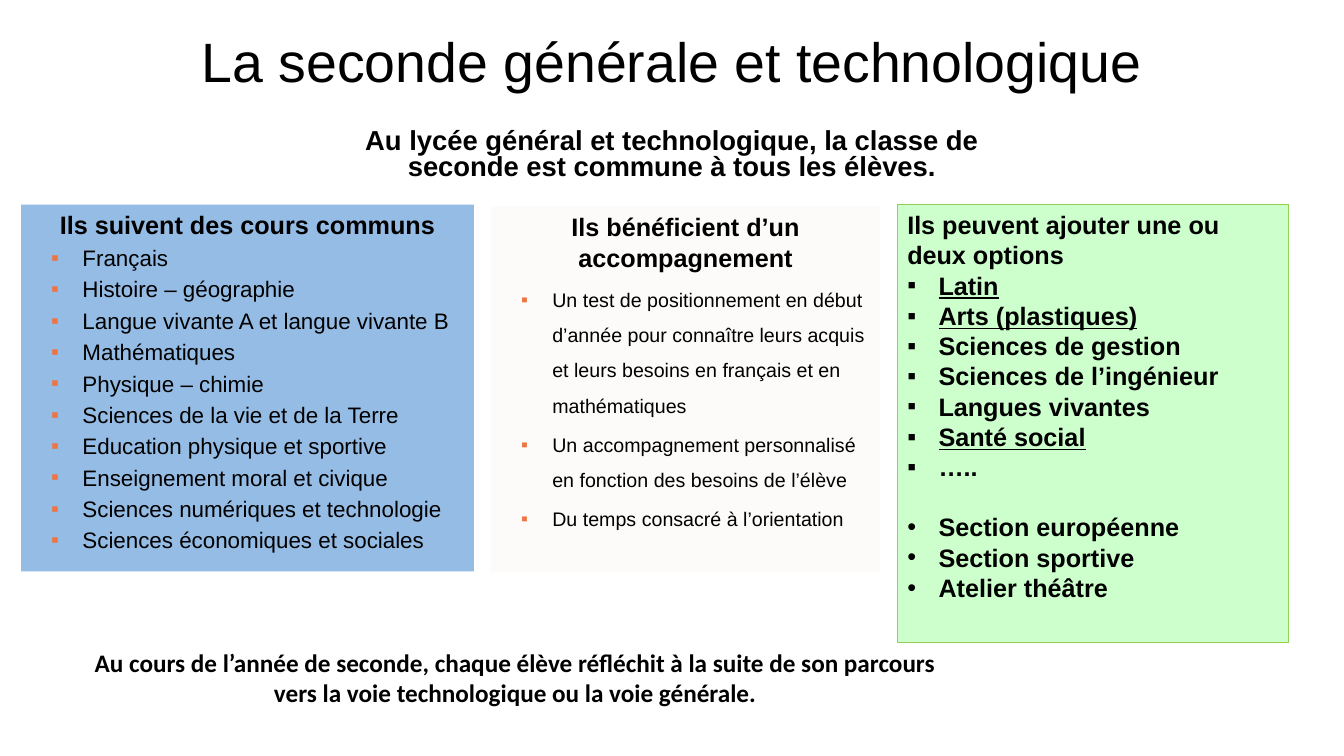
from dataclasses import dataclass

from lxml.etree import SubElement
from pptx import Presentation
from pptx.dml.color import RGBColor
from pptx.enum.shapes import MSO_SHAPE
from pptx.enum.text import MSO_ANCHOR, MSO_AUTO_SIZE, PP_ALIGN
from pptx.oxml.ns import qn
from pptx.util import Inches, Pt


@dataclass(frozen=True)
class Theme:
    font: str = "Arial"
    closing_font: str = "Calibri"
    ink: str = "000000"
    accent: str = "EE7444"
    blue: str = "95BCE5"
    cream: str = "FCFBF9"
    green: str = "CCFFCC"
    green_edge: str = "92D050"
    title: float = 39.6
    intro: float = 19.6
    heading: float = 18
    course: float = 16
    support: float = 14


THEME = Theme()
HANG = 0.31
SQUARE, DOT = "▪", "•"

COURSES = [
    "Français",
    "Histoire – géographie",
    "Langue vivante A et langue vivante B",
    "Mathématiques",
    "Physique – chimie",
    "Sciences de la vie et de la Terre",
    "Education physique et sportive",
    "Enseignement moral et civique",
    "Sciences numériques et technologie",
    "Sciences économiques et sociales",
]
SUPPORT = [
    "Un test de positionnement en début d’année pour connaître leurs acquis "
    "et leurs besoins en français et en mathématiques",
    "Un accompagnement personnalisé en fonction des besoins de l’élève",
    "Du temps consacré à l’orientation",
]
OPTIONS = [
    "Latin",
    "Arts (plastiques)",
    "Sciences de gestion",
    "Sciences de l’ingénieur",
    "Langues vivantes",
    "Santé social",
    "…..",
]
UNDERLINED = {"Latin", "Arts (plastiques)", "Santé social"}
SECTIONS = ["Section européenne", "Section sportive", "Atelier théâtre"]


def style(para, size, bold=True, font=THEME.font, align=PP_ALIGN.LEFT):
    para.alignment = align
    for span in para.runs:
        span.font.name = font
        span.font.size = Pt(size)
        span.font.bold = bold
        span.font.color.rgb = RGBColor.from_string(THEME.ink)


def place(box, left, top, width, height):
    box.left, box.top = Inches(left), Inches(top)
    box.width, box.height = Inches(width), Inches(height)


def fill_placeholder(box, area, text, size, bold, align, spacing, anchor):
    place(box, *area)
    frame = box.text_frame
    frame.text = text
    frame.word_wrap = True
    frame.auto_size = MSO_AUTO_SIZE.NONE
    frame.vertical_anchor = anchor
    para = frame.paragraphs[0]
    properties = para._p.get_or_add_pPr()
    properties.set("marL", "0")
    properties.set("indent", "0")
    SubElement(properties, qn("a:buNone"))
    style(para, size, bold, align=align)
    para.line_spacing = spacing
    para.space_before = Pt(0)


def add_panel(page, area, fill, heading, align, edge=None):
    """Coloured rectangle that opens with a bold heading."""
    panel = page.shapes.add_shape(MSO_SHAPE.RECTANGLE, *map(Inches, area))
    panel.shadow.inherit = False
    panel.fill.solid()
    panel.fill.fore_color.rgb = RGBColor.from_string(fill)
    if edge:
        panel.line.color.rgb = RGBColor.from_string(edge)
        panel.line.width = Pt(0.75)
    else:
        panel.line.fill.background()
    frame = panel.text_frame
    frame.text = heading
    frame.word_wrap = True
    frame.vertical_anchor = MSO_ANCHOR.TOP
    style(frame.paragraphs[0], THEME.heading, align=align)
    return frame


def add_bullet(frame, text, size, mark=SQUARE, margin=HANG, colour=THEME.ink,
               bold=True, level=0, before=0.0, spacing=1.0):
    para = frame.add_paragraph()
    para.text = text
    para.level = level
    properties = para._p.get_or_add_pPr()
    properties.set("marL", str(Inches(margin)))
    properties.set("indent", str(-Inches(HANG)))
    bullet_colour = SubElement(properties, qn("a:buClr"))
    SubElement(bullet_colour, qn("a:srgbClr"), val=colour)
    SubElement(properties, qn("a:buFont"), typeface=THEME.font)
    SubElement(properties, qn("a:buChar"), char=mark)
    style(para, size, bold)
    para.line_spacing = spacing
    para.space_before = Pt(before)
    return para


def add_accent_list(frame, items, size, spacing=1.0):
    for item in items:
        add_bullet(frame, item, size, margin=0.51, colour=THEME.accent,
                   bold=False, level=1, before=size * 0.2, spacing=spacing)


def add_closing(page, area, text):
    box = page.shapes.add_textbox(*map(Inches, area))
    box.text_frame.word_wrap = True
    box.text_frame.text = text
    style(box.text_frame.paragraphs[0], THEME.heading,
          font=THEME.closing_font, align=PP_ALIGN.CENTER)


def main():
    deck = Presentation()
    deck.slide_width, deck.slide_height = Inches(13.33), Inches(7.5)
    page = deck.slides.add_slide(deck.slide_layouts[1])

    # Title and introduction
    fill_placeholder(page.shapes.title, (1.9, 0.14, 10.24, 1),
                     "La seconde générale et technologique",
                     THEME.title, False, PP_ALIGN.LEFT, 0.9, MSO_ANCHOR.MIDDLE)
    fill_placeholder(page.placeholders[1], (3.36, 1.23, 6.61, 0.7),
                     "Au lycée général et technologique, la classe de seconde "
                     "est commune à tous les élèves.",
                     THEME.intro, True, PP_ALIGN.CENTER, 0.8, MSO_ANCHOR.TOP)

    # Common courses
    courses = add_panel(page, (0.21, 2.03, 4.49, 3.64), THEME.blue,
                        "Ils suivent des cours communs", PP_ALIGN.CENTER)
    add_accent_list(courses, COURSES, THEME.course)

    # Support
    support = add_panel(page, (4.87, 2.05, 3.86, 3.63), THEME.cream,
                        "Ils bénéficient d’un accompagnement", PP_ALIGN.CENTER)
    add_accent_list(support, SUPPORT, THEME.support, spacing=1.5)

    # Options, then sections set apart by one line
    options = add_panel(page, (8.9, 2.03, 3.88, 4.34), THEME.green,
                        "Ils peuvent ajouter une ou deux options",
                        PP_ALIGN.LEFT, THEME.green_edge)
    for option in OPTIONS:
        para = add_bullet(options, option, THEME.heading)
        para.runs[0].font.underline = option in UNDERLINED
    for index, section in enumerate(SECTIONS):
        add_bullet(options, section, THEME.heading, mark=DOT,
                   before=0 if index else 21.5)

    # Closing message
    add_closing(page, (0.62, 6.37, 8.98, 0.71),
                "Au cours de l’année de seconde, chaque élève réfléchit à la "
                "suite de son parcours vers la voie technologique ou la voie "
                "générale.")

    deck.save("out.pptx")


if __name__ == "__main__":
    main()
